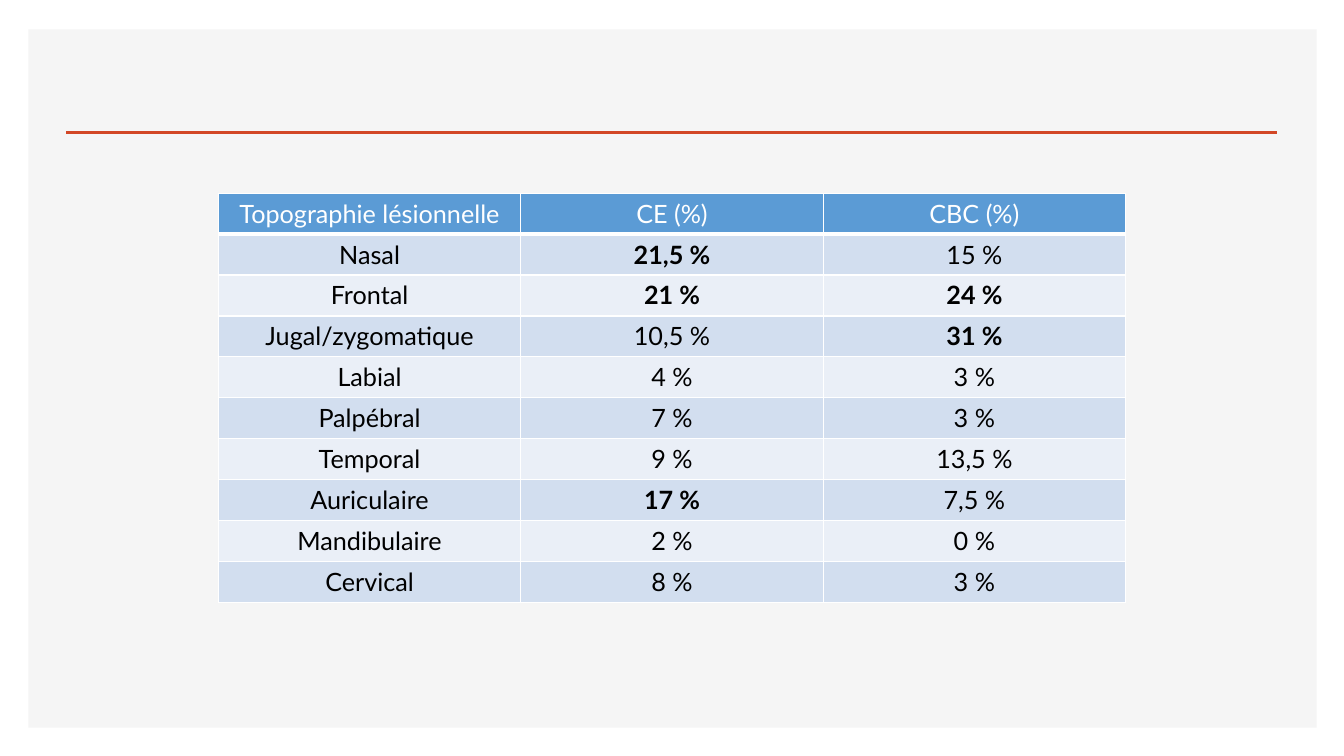
from lxml import etree
from pptx import Presentation
from pptx.dml.color import RGBColor
from pptx.enum.shapes import MSO_CONNECTOR, MSO_SHAPE
from pptx.enum.text import PP_ALIGN
from pptx.oxml.ns import qn
from pptx.util import Pt

PX = 9525
CENTER = PP_ALIGN.CENTER
RECT = MSO_SHAPE.RECTANGLE
STRAIGHT = MSO_CONNECTOR.STRAIGHT

THEME = {
    "font": "Lato", "size": 18,
    "panel": "F5F5F5", "rule": "D24726",
    "head": "5B9BD5", "bands": ("D2DEEF", "EAEFF7"),
    "light": "FFFFFF", "dark": "000000",
}
HEADS = ("Topographie lésionnelle", "CE (%)", "CBC (%)")
SITES = (
    ("Nasal", "21,5 %", "15 %"),
    ("Frontal", "21 %", "24 %"),
    ("Jugal/zygomatique", "10,5 %", "31 %"),
    ("Labial", "4 %", "3 %"),
    ("Palpébral", "7 %", "3 %"),
    ("Temporal", "9 %", "13,5 %"),
    ("Auriculaire", "17 %", "7,5 %"),
    ("Mandibulaire", "2 %", "0 %"),
    ("Cervical", "8 %", "3 %"),
)
BOLD = {(1, 1), (2, 1), (2, 2), (3, 2), (7, 1)}  # (row, column)
COL_W, ROW_H = 288, 39


def rgb(name):
    return RGBColor.from_string(name)


def edge(cell, side, width):
    """Draw one light border; side is L, R, T or B, width is in points."""
    line = etree.SubElement(cell._tc.get_or_add_tcPr(), qn("a:ln" + side), w=str(Pt(width)))
    fill = etree.SubElement(line, qn("a:solidFill"))
    etree.SubElement(fill, qn("a:srgbClr"), val=THEME["light"])


deck = Presentation()
deck.slide_width, deck.slide_height = 1280 * PX, 720 * PX
slide = deck.slides.add_slide(deck.slide_layouts[6])
shapes = slide.shapes

panel = shapes.add_shape(RECT, 27 * PX, 28 * PX, 1227 * PX, 665 * PX)
panel.shadow.inherit = False
panel.fill.solid()
panel.fill.fore_color.rgb = rgb(THEME["panel"])
panel.line.fill.background()

rule = shapes.add_connector(STRAIGHT, 63 * PX, 126 * PX, 1216 * PX, 126 * PX)
rule.line.color.rgb = rgb(THEME["rule"])
rule.line.width = Pt(2)
etree.SubElement(rule._element.spPr, qn("a:effectLst"))

rows = (HEADS,) + SITES
table = shapes.add_table(
    len(rows), len(HEADS), 208 * PX, 184 * PX,
    len(HEADS) * COL_W * PX, len(rows) * ROW_H * PX,
).table

for r, row in enumerate(rows):
    head = r == 0
    back = THEME["head"] if head else THEME["bands"][(r - 1) % 2]
    for c, text in enumerate(row):
        cell = table.cell(r, c)
        for side in "LRTB":
            edge(cell, side, 3 if head and side == "B" else 1)
        cell.fill.solid()
        cell.fill.fore_color.rgb = rgb(back)
        cell.text = text
        para = cell.text_frame.paragraphs[0]
        para.alignment = CENTER
        font = para.font
        font.name, font.size = THEME["font"], Pt(THEME["size"])
        font.bold = (r, c) in BOLD
        font.color.rgb = rgb(THEME["light" if head else "dark"])

deck.save("out.pptx")
